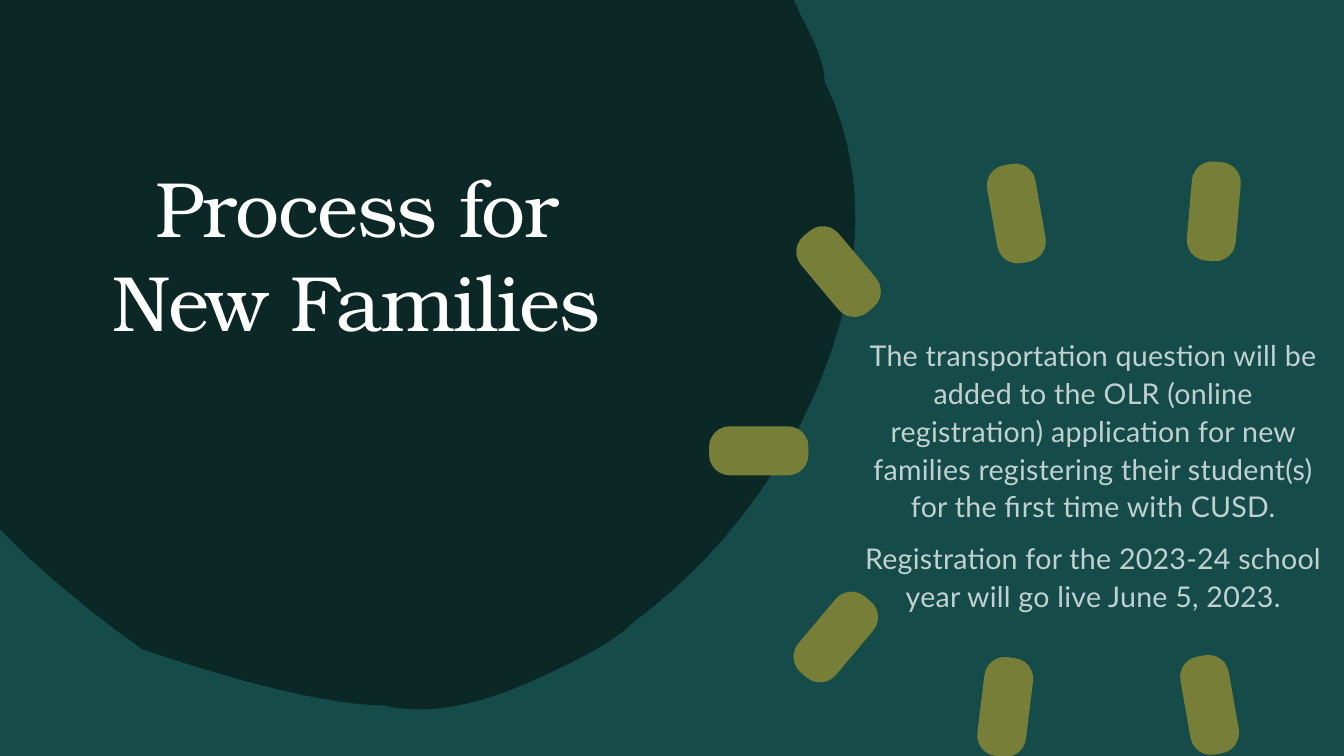
"""Build the slide on the registration process for new families."""
from pptx import Presentation
from pptx.dml.color import RGBColor
from pptx.enum.shapes import MSO_SHAPE
from pptx.enum.text import MSO_ANCHOR, MSO_AUTO_SIZE, PP_ALIGN
from pptx.util import Pt

TEAL = RGBColor(0x15, 0x4C, 0x4A)
DARK = RGBColor(0x0B, 0x28, 0x27)
OLIVE = RGBColor(0x76, 0x7E, 0x37)
WHITE = RGBColor(0xFF, 0xFF, 0xFF)
MIST = RGBColor(0xC1, 0xD0, 0xD0)
CURVE_STEPS = 12
RAY_LENGTH, RAY_WIDTH = 71, 35

BLOB_CURVES = [
    (581, 28, 589, 45, 589, 58),
    (619, 120, 618, 190, 588, 267),
    (557, 345, 508, 403, 453, 444),
    (438, 458, 422, 467, 394, 480),
    (355, 499, 313, 513, 274, 504),
    (233, 503, 177, 489, 102, 464),
    (71, 442, 44, 420, 19, 397),
]
RAYS = [
    (864, 503.5, 80), (542, 322, 0), (867, 151, 95), (726, 152.5, 80),
    (597, 455, -50), (718, 505, 97), (599, 194, 50),
]
STEPS = [
    "The transportation question will be added to the OLR (online registration) "
    "application for new families registering their student(s) for the first time with CUSD.",
    "Registration for the 2023-24 school year will go live June 5, 2023.",
]


def paint(shape, color):
    shape.shadow.inherit = False
    shape.fill.solid()
    shape.fill.fore_color.rgb = color
    shape.line.fill.background()


def set_text(frame, texts, font_name, size, color, tracking):
    frame.text = "\n".join(texts)
    frame.word_wrap = True
    frame.auto_size = MSO_AUTO_SIZE.NONE
    frame.vertical_anchor = MSO_ANCHOR.MIDDLE
    frame.margin_left = frame.margin_top = frame.margin_right = frame.margin_bottom = 0
    for paragraph in frame.paragraphs:
        paragraph.alignment = PP_ALIGN.CENTER
        for run in paragraph.runs:
            run.font.name = font_name
            run.font.size = Pt(size)
            run.font.color.rgb = color
            run.font._element.set("spc", str(tracking))


deck = Presentation()
deck.slide_width, deck.slide_height = Pt(960), Pt(540)
slide = deck.slides.add_slide(deck.slide_layouts[5])
slide.background.fill.solid()
slide.background.fill.fore_color.rgb = DARK

backdrop = slide.shapes.add_shape(MSO_SHAPE.RECTANGLE, 0, 0, Pt(960), Pt(540))
paint(backdrop, TEAL)

blob_points = [(567, 0), (572, 11)]
for x1, y1, x2, y2, x3, y3 in BLOB_CURVES:
    x0, y0 = blob_points[-1]
    for step in range(1, CURVE_STEPS + 1):
        t = step / CURVE_STEPS
        a, b, c, d = (1 - t) ** 3, 3 * t * (1 - t) ** 2, 3 * t * t * (1 - t), t ** 3
        blob_points.append((a * x0 + b * x1 + c * x2 + d * x3,
                            a * y0 + b * y1 + c * y2 + d * y3))
blob_points.append((0, 378))
blob_builder = slide.shapes.build_freeform(0, 0)
blob_builder.add_line_segments([(Pt(x), Pt(y)) for x, y in blob_points])
paint(blob_builder.convert_to_shape(), DARK)

title = slide.shapes.title
slide.shapes.element.append(title.element)
title.left, title.top, title.width, title.height = Pt(57), Pt(57), Pt(395), Pt(247)
set_text(title.text_frame, ["Process for New Families"], "TeX Gyre Bonum", 56, WHITE, -100)

sunburst = slide.shapes.add_group_shape()
for center_x, center_y, angle in RAYS:
    ray = sunburst.shapes.add_shape(
        MSO_SHAPE.ROUNDED_RECTANGLE,
        Pt(center_x - RAY_LENGTH / 2), Pt(center_y - RAY_WIDTH / 2),
        Pt(RAY_LENGTH), Pt(RAY_WIDTH))
    ray.adjustments[0] = 0.42
    ray.rotation = angle
    paint(ray, OLIVE)

details = slide.shapes.add_textbox(Pt(610), Pt(234.5), Pt(342), Pt(208))
set_text(details.text_frame, STEPS, "Lato", 20.4, MIST, 20)
for paragraph in details.text_frame.paragraphs:
    paragraph.line_spacing = 1.1
    paragraph.space_before = Pt(10)

deck.save("out.pptx")
